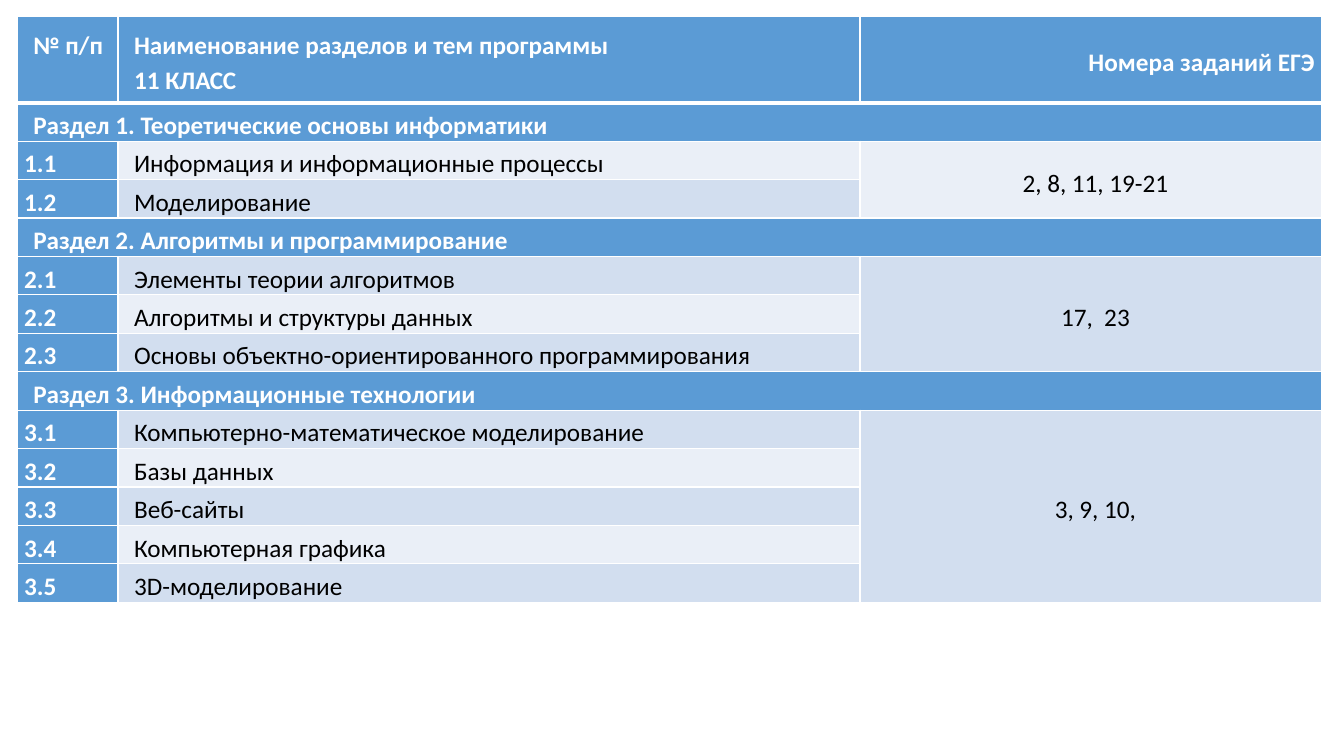
from dataclasses import dataclass

from lxml import etree
from pptx import Presentation
from pptx import util as u
from pptx.dml.color import RGBColor
from pptx.enum import text
from pptx.oxml import ns


@dataclass(frozen=True)
class Theme:
    font: str = "Calibri"
    size: int = 18
    accent: str = "5B9BD5"
    bands: tuple = ("EAEFF7", "D2DEEF")
    light: str = "FFFFFF"
    dark: str = "000000"
    thin: int = 1
    thick: int = 3


theme = Theme()
LEFT, CENTER, RIGHT = text.PP_ALIGN.LEFT, text.PP_ALIGN.CENTER, text.PP_ALIGN.RIGHT
INDENT = u.Inches(0.09)

header = [
    ("№ п/п", LEFT),
    ("Наименование разделов и тем программы\n11 КЛАСС", LEFT),
    ("Номера заданий ЕГЭ", RIGHT),
]
sections = [
    ("Теоретические основы информатики", "2, 8, 11, 19-21",
     ["Информация и информационные процессы", "Моделирование"]),
    ("Алгоритмы и программирование", "17,  23",
     ["Элементы теории алгоритмов", "Алгоритмы и структуры данных",
      "Основы объектно-ориентированного программирования"]),
    ("Информационные технологии", "3, 9, 10,",
     ["Компьютерно-математическое моделирование", "Базы данных", "Веб-сайты",
      "Компьютерная графика", "3D-моделирование"]),
]


def write(cell, wording, heading=False, align=LEFT, indent=INDENT):
    cell.text = wording
    for paragraph in cell.text_frame.paragraphs:
        paragraph.alignment = align
        paragraph.line_spacing = 1.15
        pPr = paragraph._p.get_or_add_pPr()
        pPr.set("marL", str(indent))
        pPr.set("indent", "0")
        font_format = {"name": theme.font, "size": u.Pt(theme.size), "bold": heading}
        for name, value in font_format.items():
            setattr(paragraph.font, name, value)
            setattr(paragraph.runs[0].font, name, value)
        color = theme.light if heading else theme.dark
        paragraph.runs[0].font.color.rgb = RGBColor.from_string(color)


def set_borders(cell, widths):
    """Draw the left, right, top and bottom edges with widths in points."""
    tcPr = cell._tc.get_or_add_tcPr()
    for place, (side, width) in enumerate(zip("LRTB", widths)):
        line = etree.Element(ns.qn(f"a:ln{side}"), w=str(u.Pt(width)))
        solid = etree.SubElement(line, ns.qn("a:solidFill"))
        etree.SubElement(solid, ns.qn("a:srgbClr"), val=theme.light)
        tcPr.insert(place, line)


presentation = Presentation()
presentation.slide_width, presentation.slide_height = u.Inches(13.33), u.Inches(7.5)
slide = presentation.slides.add_slide(presentation.slide_layouts[6])

row_count = 1 + sum(1 + len(topics) for _, _, topics in sections)
plan = slide.shapes.add_table(
    row_count, 3, u.Inches(0.17), u.Inches(0.16), u.Inches(12.94), u.Inches(5.8)
).table
for column, width in zip(plan.columns, (1, 7.36, 4.58)):
    column.width = u.Inches(width)
for index, row in enumerate(plan.rows):
    row.height = u.Inches(0.38 if index else 0.86)

cell_format = {
    "margin_left": u.Inches(0.07),
    "margin_right": u.Inches(0.07),
    "margin_top": u.Inches(0.03),
    "margin_bottom": 0,
    "vertical_anchor": text.MSO_ANCHOR.MIDDLE,
}
section_rows = set()

for column, (title, align) in enumerate(header):
    write(plan.cell(0, column), title, heading=True, align=align)

row = 1
for number, (section, tasks, topics) in enumerate(sections, 1):
    section_rows.add(row)
    plan.cell(row, 0).merge(plan.cell(row, 2))
    write(plan.cell(row, 0), f"Раздел {number}. {section}", heading=True)
    first = row + 1
    row += 1 + len(topics)
    plan.cell(first, 2).merge(plan.cell(row - 1, 2))
    write(plan.cell(first, 2), tasks, align=CENTER)
    for step, topic in enumerate(topics):
        write(plan.cell(first + step, 0), f"{number}.{step + 1}", heading=True, indent=0)
        write(plan.cell(first + step, 1), topic)

for r in range(row_count):
    for c in range(3):
        cell = plan.cell(r, c)
        for name, value in cell_format.items():
            setattr(cell, name, value)
        accented = r == 0 or c == 0 or r in section_rows
        cell.fill.solid()
        cell.fill.fore_color.rgb = RGBColor.from_string(
            theme.accent if accented else theme.bands[r % 2])
        top = theme.thick if r == 1 else theme.thin
        bottom = theme.thick if r == 0 else theme.thin
        set_borders(cell, (theme.thin, theme.thin, top, bottom))

# The number heading lines up with the first line of its neighbour
number_heading = plan.cell(0, 0)
number_heading.vertical_anchor = text.MSO_ANCHOR.TOP
number_heading.margin_top = u.Inches(0.1)

presentation.save("out.pptx")
